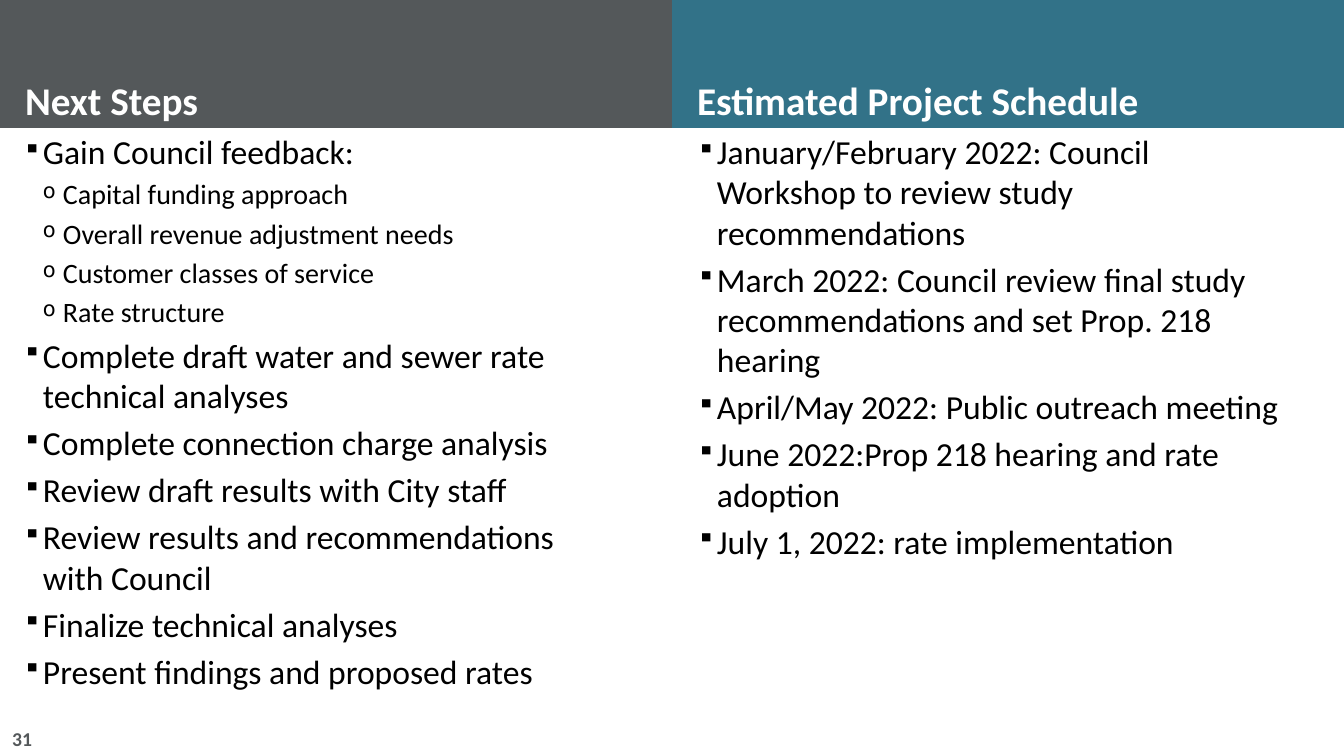
from lxml import etree
from pptx import Presentation
from pptx.dml.color import RGBColor
from pptx.enum.shapes import MSO_SHAPE
from pptx.enum.text import MSO_ANCHOR, PP_ALIGN
from pptx.oxml.ns import qn
from pptx.util import Pt

PX = 914400 * 10 // 1008
RECTANGLE = MSO_SHAPE.RECTANGLE
TOP, BOTTOM = MSO_ANCHOR.TOP, MSO_ANCHOR.BOTTOM
LEFT, RIGHT = PP_ALIGN.LEFT, PP_ALIGN.RIGHT
GRAY = RGBColor(0x54, 0x58, 0x5A)
TEAL = RGBColor(0x32, 0x72, 0x88)
WHITE = RGBColor(0xFF, 0xFF, 0xFF)
BLACK = RGBColor(0x00, 0x00, 0x00)

INDENT = 20
BULLETS = ["▪", "o"]
SIZES = [24, 20]

# Each column: header left, body left, header colour, title, (level, text) items
COLUMNS = [
    (0, -2, GRAY, "Next Steps", [
        (0, "Gain Council feedback:"),
        (1, "Capital funding approach"),
        (1, "Overall revenue adjustment needs"),
        (1, "Customer classes of service"),
        (1, "Rate structure"),
        (0, "Complete draft water and sewer rate technical analyses"),
        (0, "Complete connection charge analysis"),
        (0, "Review draft results with City staff"),
        (0, "Review results and recommendations with Council"),
        (0, "Finalize technical analyses"),
        (0, "Present findings and proposed rates"),
    ]),
    (672, 672, TEAL, "Estimated Project Schedule", [
        (0, "January/February 2022: Council Workshop to review study recommendations"),
        (0, "March 2022: Council review final study recommendations and set Prop. 218 hearing"),
        (0, "April/May 2022: Public outreach meeting"),
        (0, "June 2022:Prop 218 hearing and rate adoption"),
        (0, "July 1, 2022: rate implementation"),
    ]),
]


def prepare_frame(shape, side, anchor):
    """Wrap the text and set insets and anchor; return the text frame."""
    frame = shape.text_frame
    frame.word_wrap = True
    frame.margin_left = frame.margin_right = side * PX
    frame.margin_top = frame.margin_bottom = 5 * PX
    frame.vertical_anchor = anchor
    return frame


def write(para, text, size, color, bold=False, align=LEFT):
    para.text = text
    para.alignment = align
    font = para.runs[0].font
    font.name = "Calibri"
    font.size = Pt(size)
    font.bold = bold
    font.color.rgb = color


deck = Presentation()
deck.slide_width = 1344 * PX
deck.slide_height = 756 * PX
page = deck.slides.add_slide(deck.slide_layouts[6])

for header_left, body_left, color, title, items in COLUMNS:
    body = page.shapes.add_textbox(body_left * PX, 126 * PX, 633 * PX, 570 * PX)
    frame = prepare_frame(body, 25, TOP)
    for index, (level, text) in enumerate(items):
        para = frame.add_paragraph() if index else frame.paragraphs[0]
        write(para, text, SIZES[level], BLACK)
        para.level = level
        para.space_before = Pt(SIZES[level] * 0.2)
        properties = para._p.get_or_add_pPr()
        properties.set("marL", str(INDENT * (level + 1) * PX))
        properties.set("indent", str(-INDENT * PX))
        etree.SubElement(properties, qn("a:buSzPct")).set("val", "75000")
        etree.SubElement(properties, qn("a:buChar")).set("char", BULLETS[level])

    header = page.shapes.add_shape(RECTANGLE, header_left * PX, 0, 672 * PX, 128 * PX)
    header.shadow.inherit = False
    header.fill.solid()
    header.fill.fore_color.rgb = color
    header.line.fill.background()
    para = prepare_frame(header, 25, BOTTOM).paragraphs[0]
    write(para, title, 28, WHITE, bold=True)
    para.line_spacing = Pt(26)

number = page.shapes.add_textbox(0, 722 * PX, 42 * PX, 34 * PX)
write(prepare_frame(number, 10, TOP).paragraphs[0], "31", 14, GRAY, bold=True, align=RIGHT)

deck.save("out.pptx")
